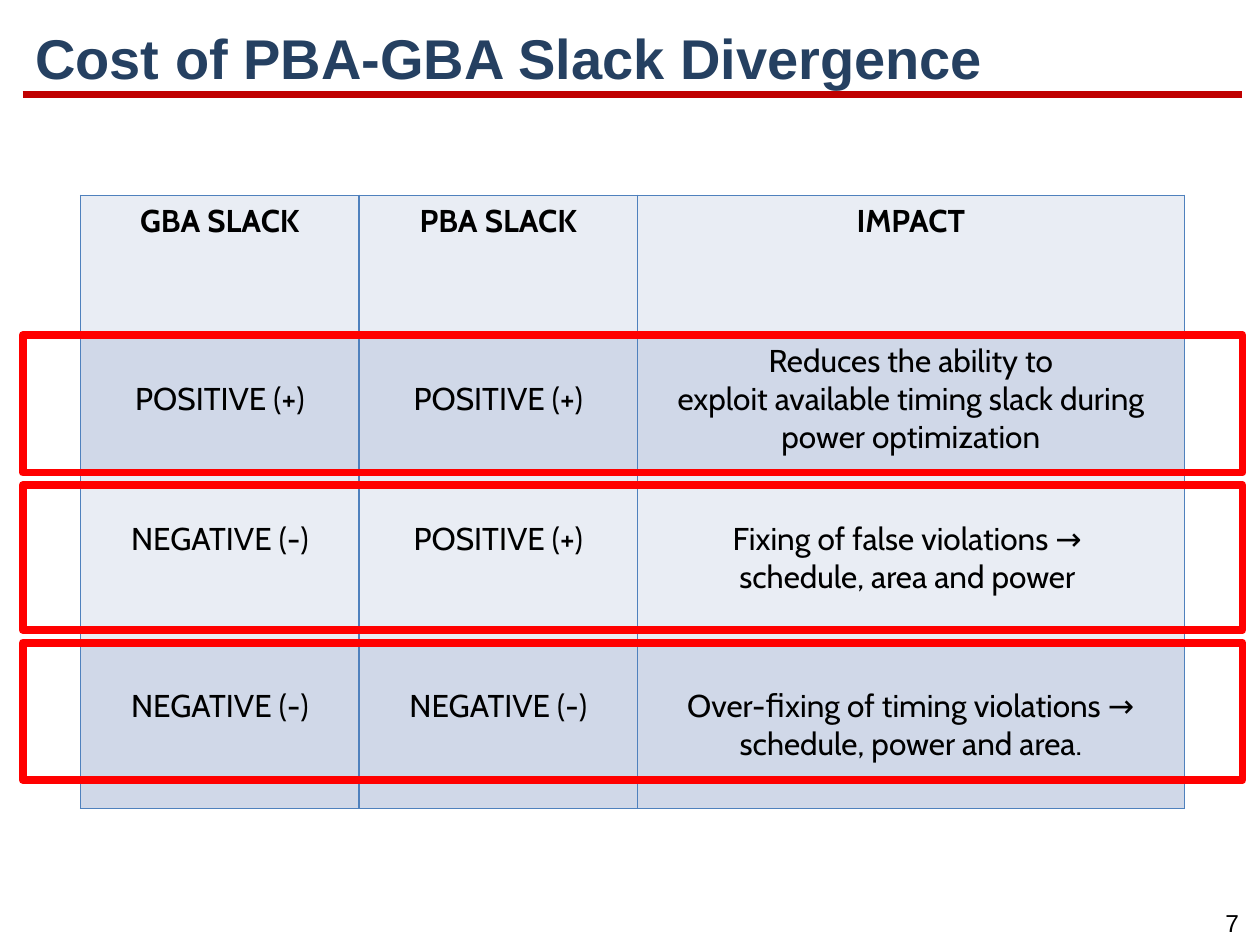
from dataclasses import dataclass

import pptx
import pptx.dml.color
import pptx.enum.shapes
import pptx.enum.text
import pptx.oxml.ns
import pptx.util
from lxml import etree

Pt = pptx.util.Pt
qn = pptx.oxml.ns.qn
PP_ALIGN = pptx.enum.text.PP_ALIGN


@dataclass(frozen=True)
class Theme:
    title: str = "254061"
    text: str = "000000"
    rule: str = "C00000"
    highlight: str = "FF0000"
    border: str = "4F81BD"
    bands: tuple = ("E9EDF4", "D0D8E8")
    font: str = "Arial"
    table_font: str = "Cabin"
    title_size: int = 32
    table_size: int = 18
    number_size: int = 14
    line_width: float = 4.5
    border_width: float = 1


THEME = Theme()
MARGIN = 3.6
LINE_HEIGHT = 22
LEFT, WIDTH = 13, 697

COLUMN_WIDTHS = (159.1, 159.1, 312.5)
ROW_HEIGHTS = (80, 80, 95.2, 95.2)
ROWS = (
    ("GBA SLACK", "PBA SLACK", "IMPACT"),
    ("POSITIVE (+)", "POSITIVE (+)",
     "Reduces the ability to\nexploit available timing slack during power optimization"),
    ("NEGATIVE (-)", "POSITIVE (+)",
     "Fixing of false violations → \nschedule, area and power "),
    ("NEGATIVE (-)", "NEGATIVE (-)",
     "Over-ﬁxing of timing violations →\nschedule, power and area."),
)
# Cells whose text starts at the top; the others start one line lower.
TOP_CELLS = {(0, 0), (0, 1), (0, 2), (1, 2)}


def rgb(color):
    return pptx.dml.color.RGBColor.from_string(color)


def set_text(tf, text, font, size, color, bold=False, align=PP_ALIGN.LEFT):
    tf.text = text
    for p in tf.paragraphs:
        p.alignment = align
        for r in p.runs:
            r.font.name = font
            r.font.size = Pt(size)
            r.font.bold = bold
            r.font.color.rgb = rgb(color)


def add_text(s, left, top, width, height, text, size, color, wrap=True, **style):
    tf = s.shapes.add_textbox(Pt(left), Pt(top), Pt(width), Pt(height)).text_frame
    tf.word_wrap = wrap
    set_text(tf, text, THEME.font, size, color, **style)
    return tf


def add_rule(s, y):
    line = s.shapes.add_connector(
        pptx.enum.shapes.MSO_CONNECTOR.STRAIGHT,
        Pt(LEFT), Pt(y), Pt(LEFT + WIDTH - 0.5), Pt(y))
    line.line.color.rgb = rgb(THEME.rule)
    line.line.width = Pt(THEME.line_width)
    etree.SubElement(line._element.spPr, qn("a:effectLst"))


def add_borders(cell):
    tc_pr = cell._tc.get_or_add_tcPr()
    for side in ("a:lnL", "a:lnR", "a:lnT", "a:lnB"):
        ln = etree.SubElement(tc_pr, qn(side), w=str(Pt(THEME.border_width)))
        fill = etree.SubElement(ln, qn("a:solidFill"))
        etree.SubElement(fill, qn("a:srgbClr"), val=THEME.border)


def add_slack_table(s, left, top):
    frame = s.shapes.add_table(
        len(ROWS), len(COLUMN_WIDTHS), Pt(left), Pt(top),
        Pt(sum(COLUMN_WIDTHS)), Pt(sum(ROW_HEIGHTS)))
    table = frame.table
    table.first_row = table.horz_banding = False
    for column, width in zip(table.columns, COLUMN_WIDTHS):
        column.width = Pt(width)
    for i, (height, texts) in enumerate(zip(ROW_HEIGHTS, ROWS)):
        table.rows[i].height = Pt(height)
        for j, text in enumerate(texts):
            cell = table.cell(i, j)
            add_borders(cell)
            cell.fill.solid()
            cell.fill.fore_color.rgb = rgb(THEME.bands[i % 2])
            cell.margin_top = Pt(MARGIN + (0 if (i, j) in TOP_CELLS else LINE_HEIGHT))
            set_text(cell.text_frame, text, THEME.table_font, THEME.table_size,
                     THEME.text, bold=i == 0, align=PP_ALIGN.CENTER)


def add_highlights(s, top, heights, gap):
    """Stack red outlines over the table rows, separated by equal gaps."""
    for height in heights:
        sp = s.shapes.add_shape(
            pptx.enum.shapes.MSO_SHAPE.RECTANGLE,
            Pt(LEFT), Pt(top), Pt(WIDTH), Pt(height))
        sp.shadow.inherit = False
        sp.fill.background()
        sp.line.color.rgb = rgb(THEME.highlight)
        sp.line.width = Pt(THEME.line_width)
        top += height + gap


def main():
    prs = pptx.Presentation()
    prs.slide_width, prs.slide_height = Pt(720), Pt(540)
    s = prs.slides.add_slide(prs.slide_layouts[6])

    add_rule(s, 54)
    add_text(s, 688.3, 515.5, 31.7, 24.5, "7", THEME.number_size, THEME.text,
             wrap=False, align=PP_ALIGN.CENTER)
    title = add_text(s, LEFT, 11.5, WIDTH, 46.8, "Cost of PBA-GBA Slack Divergence",
                     THEME.title_size, THEME.title, bold=True)
    title.vertical_anchor = pptx.enum.text.MSO_ANCHOR.MIDDLE
    title.paragraphs[0].line_spacing = 0.9

    add_slack_table(s, 46.1, 111.6)
    add_highlights(s, 191.5, (78.5, 82.8, 78.5), gap=7.2)

    prs.save("out.pptx")


if __name__ == "__main__":
    main()
